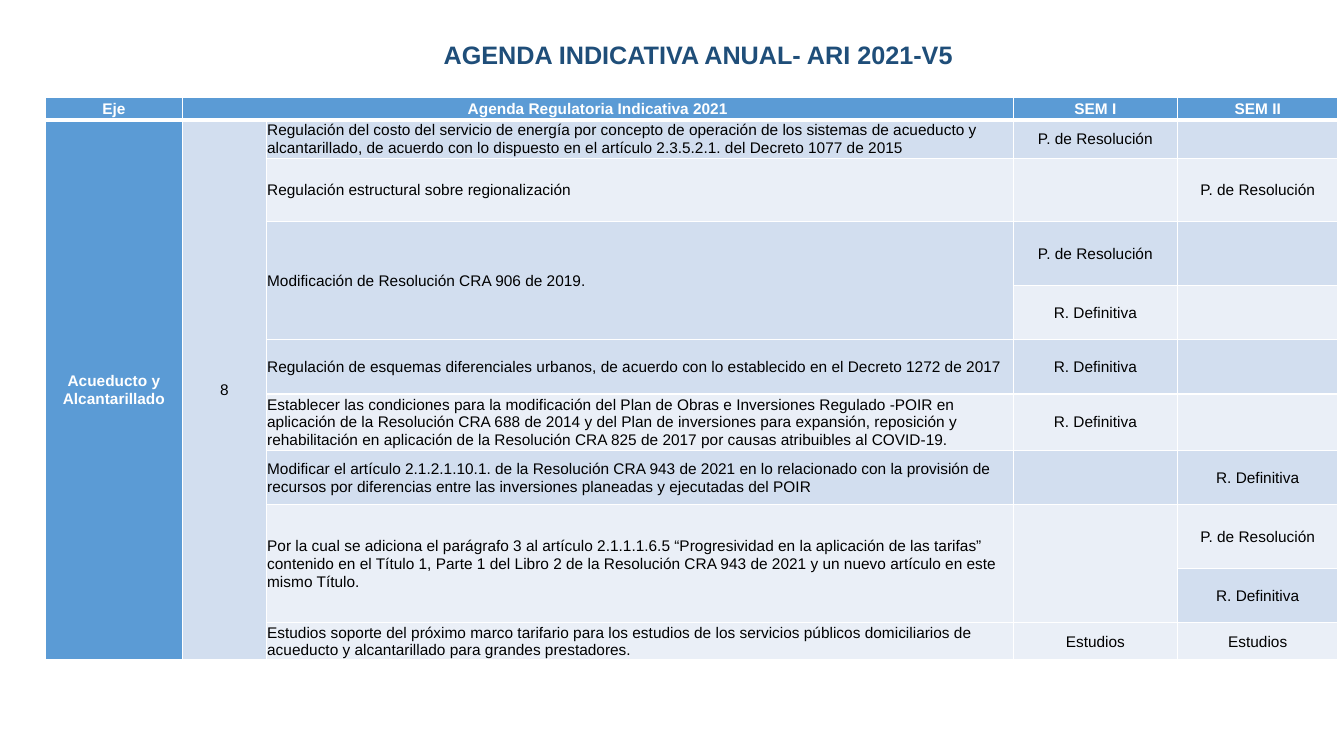
from pptx import Presentation
from pptx.dml.color import RGBColor
from pptx.enum.text import MSO_ANCHOR, PP_ALIGN
from pptx.oxml import parse_xml
from pptx.oxml.ns import nsdecls
from pptx.util import Inches, Pt

COLUMN_WIDTHS = [1.36, 0.83, 7.41, 1.63, 1.59]
ROW_HEIGHTS = [0.22, 0.38, 0.63, 0.63, 0.54, 0.54, 0.56, 0.54, 0.63, 0.54, 0.37]
PROPOSAL, FINAL, STUDIES = "P. de Resolución", "R. Definitiva", "Estudios"
ROWS = [
    ["Eje", "Agenda Regulatoria Indicativa 2021", "", "SEM I", "SEM II"],
    ["Acueducto y Alcantarillado", "8",
     "Regulación del costo del servicio de energía por concepto de operación de los sistemas de "
     "acueducto y alcantarillado, de acuerdo con lo dispuesto en el artículo 2.3.5.2.1. del "
     "Decreto 1077 de 2015", PROPOSAL, ""],
    ["", "", "Regulación estructural sobre regionalización", "", PROPOSAL],
    ["", "", "Modificación de Resolución CRA 906 de 2019.", PROPOSAL, ""],
    ["", "", "", FINAL, ""],
    ["", "", "Regulación de esquemas diferenciales urbanos, de acuerdo con lo establecido en el "
     "Decreto 1272 de 2017", FINAL, ""],
    ["", "", "Establecer las condiciones para la modificación del Plan de Obras e Inversiones "
     "Regulado -POIR en aplicación de la Resolución CRA 688 de 2014 y del Plan de inversiones "
     "para expansión, reposición y rehabilitación en aplicación de la Resolución CRA 825 de 2017 "
     "por causas atribuibles al COVID-19.", FINAL, ""],
    ["", "", "Modificar el artículo 2.1.2.1.10.1. de la Resolución CRA 943 de 2021 en lo "
     "relacionado con la provisión de recursos por diferencias entre las inversiones planeadas "
     "y ejecutadas del POIR", "", FINAL],
    ["", "", "Por la cual se adiciona el parágrafo 3 al artículo 2.1.1.1.6.5 “Progresividad en la "
     "aplicación de las tarifas” contenido en el Título 1, Parte 1 del Libro 2 de la Resolución "
     "CRA 943 de 2021 y un nuevo artículo en este mismo Título.", "", PROPOSAL],
    ["", "", "", "", FINAL],
    ["", "", "Estudios soporte del próximo marco tarifario para los estudios de los servicios "
     "públicos domiciliarios de acueducto y alcantarillado para grandes prestadores.",
     STUDIES, STUDIES],
]
MERGES = [((0, 1), (0, 2)), ((1, 0), (10, 0)), ((1, 1), (10, 1)),
          ((3, 2), (4, 2)), ((8, 2), (9, 2)), ((8, 3), (9, 3))]


def color(value):
    """Turn a hex string into a colour."""
    return RGBColor.from_string(value)


def apply(target, values):
    """Set every attribute named in a dict of format values."""
    for name, value in values.items():
        setattr(target, name, value)


class AgendaSlide:
    """Hold the style and the current slide."""

    font = "Arial"
    title_color = "1F4E79"
    accent = "5B9BD5"
    bands = ["EAEFF7", "D2DEEF"]
    white = "FFFFFF"
    black = "000000"

    def __init__(self, presentation):
        """Add a title-only slide."""
        self.slide = presentation.slides.add_slide(presentation.slide_layouts[5])

    def format_text(self, frame, text, size, text_color, bold, alignment, spacing):
        """Write one formatted paragraph."""
        paragraph = frame.paragraphs[0]
        apply(paragraph, {"alignment": alignment, "line_spacing": spacing})
        if text:
            paragraph.add_run().text = text
        for font in [paragraph.font] + [run.font for run in paragraph.runs]:
            apply(font, {"name": self.font, "size": Pt(size), "bold": bold})
            font.color.rgb = color(text_color)

    def title(self, text, left, top, width, height):
        """Place and format the title."""
        shape = self.slide.shapes.title
        apply(shape, {"left": Inches(left), "top": Inches(top),
                      "width": Inches(width), "height": Inches(height)})
        apply(shape.text_frame, {"word_wrap": True, "vertical_anchor": MSO_ANCHOR.TOP})
        self.format_text(shape.text_frame, text, 18, self.title_color, True, PP_ALIGN.LEFT, 1.0)

    def borders(self, cell, top, bottom):
        """Draw white borders around a cell."""
        properties = cell._tc.get_or_add_tcPr()
        for side, width in {"L": 1, "R": 1, "T": top, "B": bottom}.items():
            properties.append(parse_xml(
                f'<a:ln{side} {nsdecls("a")} w="{Pt(width)}"><a:solidFill>'
                f'<a:srgbClr val="{self.white}"/></a:solidFill></a:ln{side}>'))

    def cell(self, cell, text, row, column):
        """Fill and format one cell by its place in the table."""
        strong = row == 0 or column == 0
        apply(cell, {"margin_left": Inches(0.01), "margin_right": Inches(0.01),
                     "margin_top": 0, "margin_bottom": 0,
                     "vertical_anchor": MSO_ANCHOR.MIDDLE})
        self.borders(cell, 3 if row == 1 else 1, 3 if row == 0 else 1)
        cell.fill.solid()
        cell.fill.fore_color.rgb = color(self.accent if strong else self.bands[row % 2])
        alignment = PP_ALIGN.LEFT if column == 2 and row else PP_ALIGN.CENTER
        self.format_text(cell.text_frame, text, 11, self.white if strong else self.black,
                         strong, alignment, 1.03)

    def table(self, left, top, rows, widths, heights, merges):
        """Build the agenda table."""
        table = self.slide.shapes.add_table(
            len(rows), len(widths), Inches(left), Inches(top),
            Inches(sum(widths)), Inches(sum(heights))).table
        apply(table, {"first_row": False, "horz_banding": False})
        for column, width in zip(table.columns, widths):
            column.width = Inches(width)
        for row, height in zip(table.rows, heights):
            row.height = Inches(height)
        for row, texts in enumerate(rows):
            for column, text in enumerate(texts):
                self.cell(table.cell(row, column), text, row, column)
        for first, last in merges:
            table.cell(*first).merge(table.cell(*last))


def main():
    """Build and save the presentation."""
    presentation = Presentation()
    apply(presentation, {"slide_width": Inches(13.33), "slide_height": Inches(7.5)})
    agenda = AgendaSlide(presentation)
    agenda.title("AGENDA INDICATIVA ANUAL- ARI 2021-V5", 4.3, 0.34, 8.39, 0.4)
    agenda.table(0.45, 0.97, ROWS, COLUMN_WIDTHS, ROW_HEIGHTS, MERGES)
    presentation.save("out.pptx")


if __name__ == "__main__":
    main()
